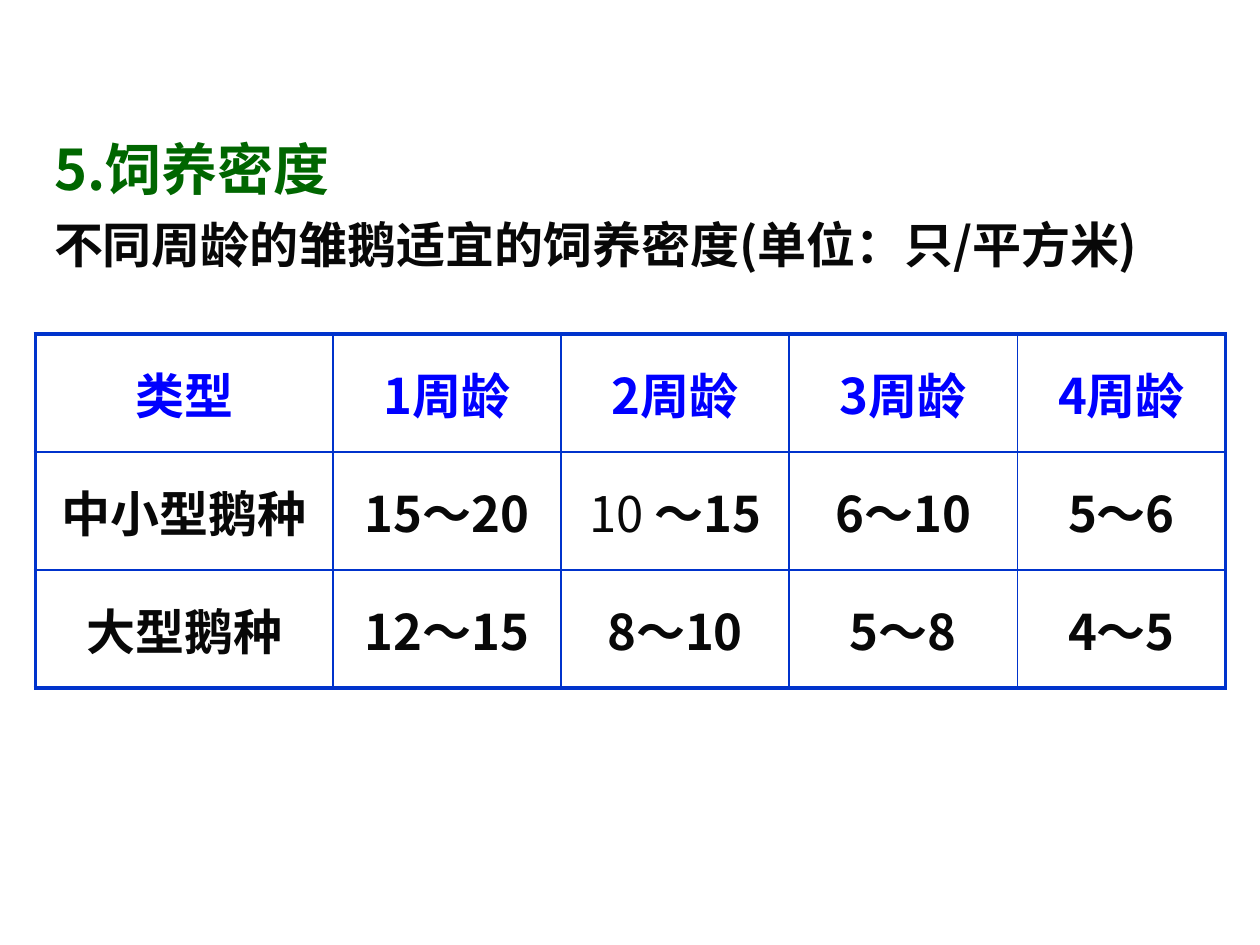
from lxml import etree
from pptx import Presentation, util as u
from pptx.dml.color import RGBColor
from pptx.enum import text
from pptx.oxml.ns import qn

FACE = "Noto Sans CJK SC"


def style(para, size, color, align):
    para.alignment = align
    font = para.font
    font.size, font.bold = u.Pt(size), True
    font.color.rgb = RGBColor.from_string(color)
    font.name = FACE
    etree.SubElement(font._element, qn("a:ea"), typeface=FACE)


def edge(cell, side, width):
    line = etree.SubElement(cell._tc.get_or_add_tcPr(), qn("a:" + side), w=str(u.Pt(width)))
    fill = etree.SubElement(line, qn("a:solidFill"))
    etree.SubElement(fill, qn("a:srgbClr"), val="0033CC")


deck = Presentation()
deck.slide_width, deck.slide_height = u.Cm(25.4), u.Cm(19.05)
slide = deck.slides.add_slide(deck.slide_layouts[5])
left, wide = u.Cm(0.84), u.Cm(23.85)

title = slide.shapes.title
title.left, title.top, title.width, title.height = left, u.Cm(2.72), wide, u.Cm(1.6)
note = slide.shapes.add_textbox(left, u.Cm(4.32), wide, u.Cm(1.45))
heads = [
    (title, "5.饲养密度", 32, "006600"),
    (note, "不同周龄的雏鹅适宜的饲养密度(单位：只/平方米)", 28, "080808"),
]
for box, words, size, color in heads:
    frame = box.text_frame
    frame.text = words
    frame.word_wrap = True
    frame.auto_size = text.MSO_AUTO_SIZE.NONE
    frame.vertical_anchor = text.MSO_ANCHOR.TOP
    frame.margin_top = frame.margin_bottom = 0
    style(frame.paragraphs[0], size, color, text.PP_ALIGN.LEFT)

rows = [
    ["类型", "1周龄", "2周龄", "3周龄", "4周龄"],
    ["中小型鹅种", "15～20", "10 ～15", "6～10", "5～6"],
    ["大型鹅种", "12～15", "8～10", "5～8", "4～5"],
]
cols = [6, 4.6, 4.6, 4.6, 4.2]
high = 2.38
grid = slide.shapes.add_table(
    len(rows), len(cols), u.Cm(0.71), u.Cm(6.73), u.Cm(sum(cols)), u.Cm(high * len(rows))
).table
grid.first_row = grid.horz_banding = False
for col, width in zip(grid.columns, cols):
    col.width = u.Cm(width)

for r, row in enumerate(rows):
    grid.rows[r].height = u.Cm(high)
    for c, words in enumerate(row):
        cell = grid.cell(r, c)
        cell.vertical_anchor = text.MSO_ANCHOR.MIDDLE
        para = cell.text_frame.paragraphs[0]
        style(para, 28, "080808" if r else "0000FF", text.PP_ALIGN.CENTER)
        start, gap, rest = words.partition(" ")
        run = para.add_run()
        run.text = start + gap
        if gap:
            run.font.bold = False
            para.add_run().text = rest
        outer = {"lnL": c == 0, "lnR": c == len(cols) - 1, "lnT": r == 0, "lnB": r == len(rows) - 1}
        for side, rim in outer.items():
            edge(cell, side, 2.25 if rim else 1)
        cell.fill.background()

deck.save("out.pptx")
